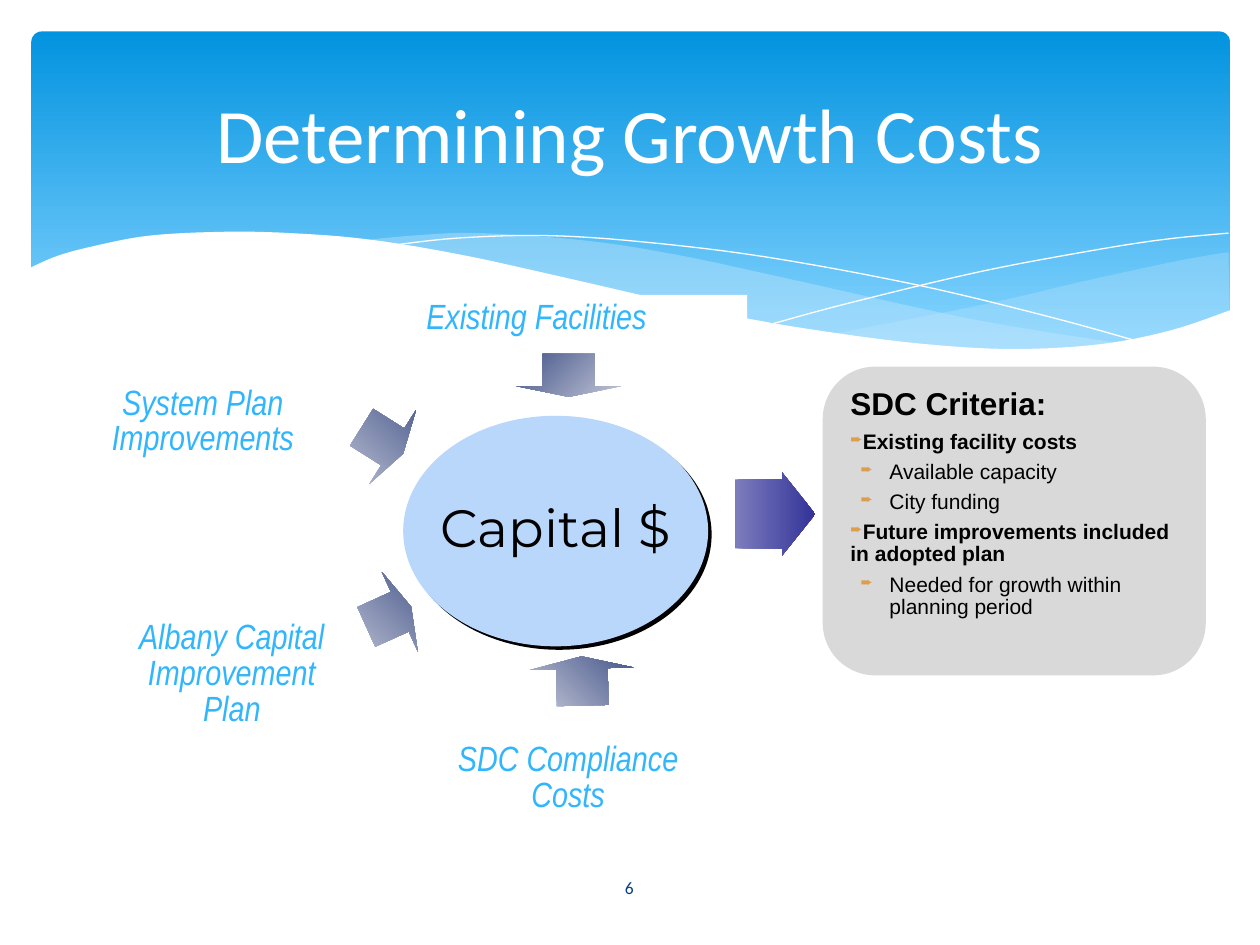
from lxml import etree
from pptx import Presentation
from pptx.dml.color import RGBColor
from pptx.enum.shapes import MSO_SHAPE
from pptx.enum.text import MSO_ANCHOR, PP_ALIGN
from pptx.oxml.ns import qn
from pptx.util import Inches, Pt

ROUNDED = MSO_SHAPE.ROUNDED_RECTANGLE
RECTANGLE = MSO_SHAPE.RECTANGLE
OVAL = MSO_SHAPE.OVAL
DOWN_ARROW = MSO_SHAPE.DOWN_ARROW
RIGHT_ARROW = MSO_SHAPE.RIGHT_ARROW
CENTER, LEFT = PP_ALIGN.CENTER, PP_ALIGN.LEFT
MIDDLE, TOP = MSO_ANCHOR.MIDDLE, MSO_ANCHOR.TOP

THEME = {
    "white": "FFFFFF", "black": "000000", "sky": "0293E0", "pale_sky": "83D3FE",
    "wave": "C6E7FC", "number": "073E87", "hub": "B9D6FB", "label": "31B6FD",
    "steel_light": "C1C6D7", "steel_dark": "445488",
    "result_light": "7D7DBE", "result_dark": "333399",
    "panel": "D9D9D9", "bullet": "DC9E4C",
    "title_size": 44, "hub_size": 30, "label_size": 20,
    "heading_size": 18, "body_size": 12, "number_size": 10,
    "title_font": "Calibri", "hub_font": "Montserrat",
    "label_font": "Arial Narrow", "body_font": "Arial",
}

COLUMNS, ROWS = 100, 75
TITLE = ("Determining Growth Costs", (5, 3.7, 90, 13.7))
NUMBER = ("6", (43.6, 68.4, 12.7, 4))
HEADER_BOX = (2.5, 2.5, 95.1, 27)
HUB = ("Capital $", (32, 33, 24.2, 18.3))
RESULT_BOX = (58.3, 37.5, 6.4, 6.6)
PANEL_BOX = (65.3, 29.1, 30.4, 24.5)

SOURCES = [
    ("Existing Facilities", (27.3, 23.4, 32, 3.9), 2.4),
    ("System Plan Improvements", (7.5, 30.2, 17.2, 6.7), 1),
    ("Albany Capital Improvement Plan", (9.4, 48.8, 18, 9.6), 1),
    ("SDC Compliance Costs", (34.6, 58.5, 21, 6.7), 1),
]
ARROWS = [
    ((41, 28.1, 8.3, 3.4), 0, 225),
    ((26.9, 33, 6.9, 3.9), 302.2, 315),
    ((27.4, 47, 6.9, 3.9), 245.7, 315),
    ((42.1, 52.1, 8.2, 3.9), 178.6, 315),
]
CRITERIA = [
    ("SDC Criteria:", "heading"),
    ("Existing facility costs", "main"),
    ("Available capacity", "sub"),
    ("City funding", "sub"),
    ("Future improvements included in adopted plan", "main"),
    ("Needed for growth within planning period", "sub"),
]
WAVES = [
    ("wave", 29, [
        [(97.5, 20), (93.5, 20.7), (86.1, 22.3), (77.9, 24.2), (66.1, 26.5)],
        [(66.1, 26.5), (73.2, 27.4), (80.3, 27.8), (86.3, 27.5), (92.1, 26.5), (97.6, 24.7)],
    ]),
    ("wave", 40, [
        [(89.3, 27.3), (77.5, 25.4), (62.9, 22.2), (54.1, 20.3), (46.5, 19.1),
         (38, 18.5), (32.8, 18.7), (28.6, 19.1)],
        [(28.6, 19.1), (36.2, 20.3), (44.9, 22.2), (56.6, 24.8), (68, 26.8),
         (76.1, 27.7), (82.8, 27.8), (89.3, 27.3)],
    ]),
    (None, 100, [[(30.9, 19.5), (36.3, 18.9), (43.3, 18.7), (51, 19.2), (60.8, 20.4),
                  (72.7, 22.6), (83.1, 25.1), (90.7, 27.2)]]),
    (None, 100, [[(61.3, 25.7), (67.2, 24.1), (77.6, 21.6), (86.6, 19.9), (92.4, 19), (97.5, 18.5)]]),
    ("white", 100, [
        [(97.7, 24.6), (93, 26.2), (87.5, 27.3), (80.9, 27.7), (74.4, 27.4), (66.8, 26.5),
         (57.9, 25), (44.7, 22), (36.5, 20.2), (29.2, 19), (23, 18.5), (17.7, 18.4),
         (11.9, 18.7), (7.6, 19.5), (4.6, 20.3), (2.3, 21.3)],
        [(2.3, 32.9), (97.7, 32.9)],
    ]),
]

presentation = Presentation()
presentation.slide_width, presentation.slide_height = Inches(10), Inches(7.5)
slide = presentation.slides.add_slide(presentation.slide_layouts[6])
COLUMN = presentation.slide_width / COLUMNS
ROW = presentation.slide_height / ROWS


def color(name):
    return RGBColor.from_string(THEME[name])


def place(box):
    left, top, width, height = box
    return [round(length) for length in (left * COLUMN, top * ROW, width * COLUMN, height * ROW)]


def child(parent, tag, **attributes):
    return etree.SubElement(parent, qn(tag), {key: str(value) for key, value in attributes.items()})


def add_block(kind, box, fill, adjustments=()):
    shape = slide.shapes.add_shape(kind, *place(box))
    shape.shadow.inherit = False
    shape.line.fill.background()
    for index, value in enumerate(adjustments):
        shape.adjustments[index] = value
    if isinstance(fill, str):
        shape.fill.solid()
        shape.fill.fore_color.rgb = color(fill)
    else:
        first, last, direction, end = fill
        shape.fill.gradient()
        shape.fill.gradient_angle = (360 - direction) % 360
        for stop, name, position in zip(shape.fill.gradient_stops, (first, last), (0, end)):
            stop.color.rgb = color(name)
            stop.position = position
    return shape


def style(paragraph, text, role, ink, align=CENTER, spacing=None, bold=False, italic=False):
    paragraph.text = text
    paragraph.alignment = align
    paragraph.line_spacing = spacing
    font = paragraph.font
    font.name, font.size = THEME[role + "_font"], Pt(THEME[role + "_size"])
    font.color.rgb, font.bold, font.italic = color(ink), bold, italic


def set_frame(shape, anchor, wrap=True):
    frame = shape.text_frame
    frame.word_wrap, frame.vertical_anchor = wrap, anchor
    return frame


def add_caption(text, box, role, ink):
    frame = set_frame(slide.shapes.add_textbox(*place(box)), MIDDLE)
    style(frame.paragraphs[0], text, role, ink)


def smooth(points, steps=6):
    if len(points) == 2:
        return points
    padded = [points[0], *points, points[-1]]
    curve = []
    for a, b, c, d in zip(padded, padded[1:], padded[2:], padded[3:]):
        for step in range(steps):
            t = step / steps
            curve.append(tuple(
                q + t * (r - p) / 2 + t**2 * (2 * p - 5 * q + 4 * r - s) / 2
                + t**3 * (3 * q - p - 3 * r + s) / 2
                for p, q, r, s in zip(a, b, c, d)))
    return curve + [points[-1]]


def add_wave(group, fill, opacity, edges):
    points = [(x * COLUMN, y * ROW) for edge in edges for x, y in smooth(edge)]
    builder = group.shapes.build_freeform(*points[0], scale=1.0)
    builder.add_line_segments(points[1:], close=fill is not None)
    shape = builder.convert_to_shape()
    shape.shadow.inherit = False
    if fill is None:
        shape.fill.background()
        shape.line.color.rgb = color("white")
        shape.line.width = Pt(0)
        return
    shape.line.fill.background()
    shape.fill.solid()
    shape.fill.fore_color.rgb = color(fill)
    if opacity < 100:
        tint = shape._element.spPr.find(qn("a:solidFill")).find(qn("a:srgbClr"))
        child(tint, "a:alpha", val=opacity * 1000)


def add_bullet(paragraph, margin, indent):
    properties = paragraph._p.get_or_add_pPr()
    properties.set("marL", str(Inches(margin)))
    properties.set("indent", str(Inches(indent)))
    child(child(properties, "a:buClr"), "a:srgbClr", val=THEME["bullet"])
    child(properties, "a:buSzPct", val=70000)
    child(properties, "a:buChar", char="➨")
    properties.append(properties.find(qn("a:defRPr")))


add_block(ROUNDED, HEADER_BOX, ("sky", "pale_sky", 90, 0.9), [0.03])
wave_group = slide.shapes.add_group_shape()
for wave in WAVES:
    add_wave(wave_group, *wave)
add_caption(*TITLE, "title", "white")
add_caption(*NUMBER, "number", "number") if "number_font" in THEME else add_caption(
    *NUMBER, THEME.setdefault("number_font", THEME["title_font"]) and "number", "number")

hub = add_block(OVAL, HUB[1], "hub")
shadow = child(hub._element.spPr.find(qn("a:effectLst")), "a:outerShdw",
               dist=Pt(2.8), dir=45 * 60000, algn="ctr", rotWithShape=0)
child(shadow, "a:srgbClr", val=THEME["black"])
style(set_frame(hub, MIDDLE, False).paragraphs[0], HUB[0], "hub", "black", spacing=0.85)

for text, box, right_margin in SOURCES:
    frame = set_frame(add_block(RECTANGLE, box, "white"), TOP)
    frame.margin_right = round(right_margin * COLUMN)
    style(frame.paragraphs[0], text, "label", "label", spacing=0.85, italic=True)

for box, rotation, direction in ARROWS:
    local_direction = (direction - rotation) % 360
    arrow = add_block(DOWN_ARROW, box, ("steel_light", "steel_dark", local_direction, 1), [0.5, 0.25])
    arrow.rotation = rotation
add_block(RIGHT_ARROW, RESULT_BOX, ("result_light", "result_dark", 0, 1), [0.83, 0.41])

THEME["heading_font"] = THEME["body_font"]
panel_frame = set_frame(add_block(ROUNDED, PANEL_BOX, "panel", [0.17]), TOP)
for index, (text, level) in enumerate(CRITERIA):
    paragraph = panel_frame.add_paragraph() if index else panel_frame.paragraphs[0]
    role = "heading" if level == "heading" else "body"
    style(paragraph, text, role, "black", LEFT, 0.9, bold=level != "sub")
    paragraph.space_before = Pt(0.2 * THEME[role + "_size"])
    paragraph.space_after = Pt(0.15 * THEME[role + "_size"])
    if level == "main":
        add_bullet(paragraph, 0, 0)
    elif level == "sub":
        paragraph.level = 1
        add_bullet(paragraph, 0.31, -0.23)

presentation.save("out.pptx")
